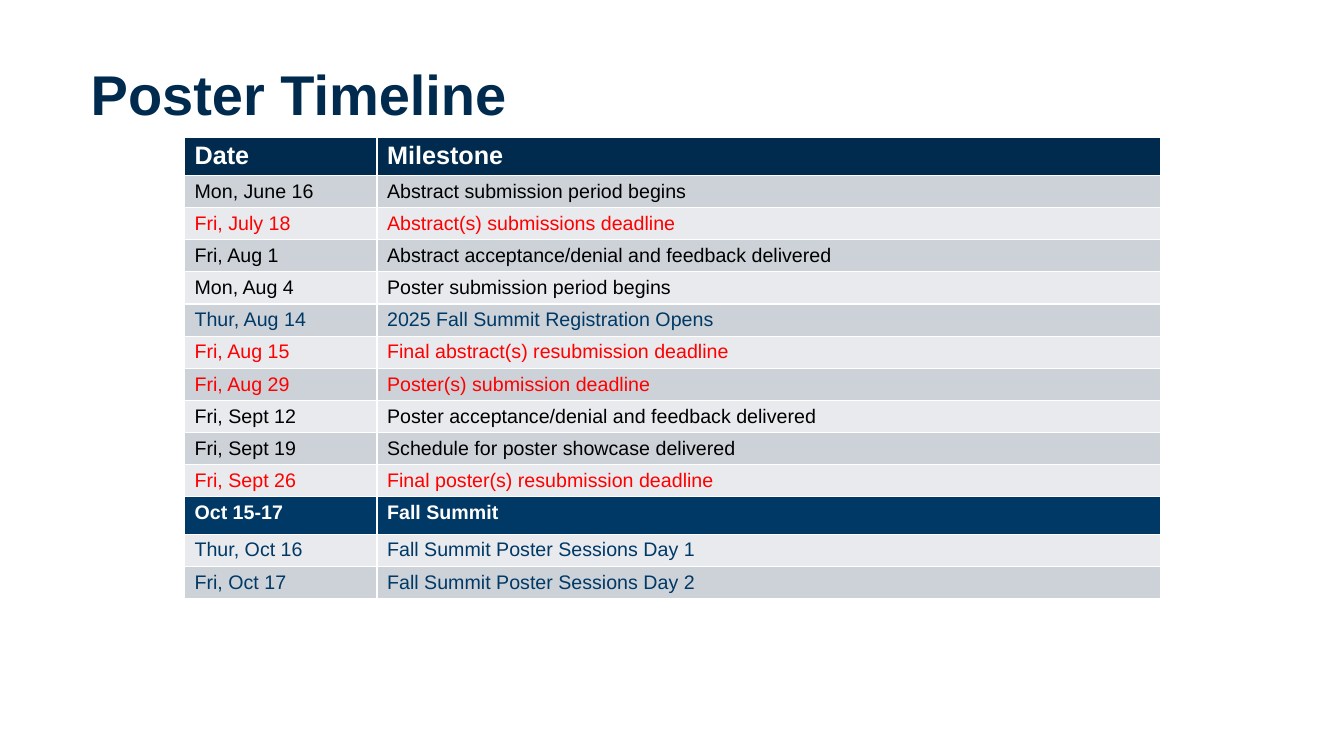
from pptx import Presentation
from pptx.dml.color import RGBColor
from pptx.enum import text
from pptx.util import Inches, Pt

FONT = "Arial"
NAVY, BLUE, RED, BLACK, WHITE = "002B4E", "003866", "FF0000", "000000", "FFFFFF"
BANDS = ("E8EAED", "CCD2D8")  # even rows, odd rows

TITLE = "Poster Timeline"
HEADER = ("Date", "Milestone")
EVENT = "Fall Summit"
MILESTONES = [
    ("Mon, June 16", "Abstract submission period begins", BLACK),
    ("Fri, July 18", "Abstract(s) submissions deadline", RED),
    ("Fri, Aug 1", "Abstract acceptance/denial and feedback delivered", BLACK),
    ("Mon, Aug 4", "Poster submission period begins", BLACK),
    ("Thur, Aug 14", "2025 Fall Summit Registration Opens", BLUE),
    ("Fri, Aug 15", "Final abstract(s) resubmission deadline", RED),
    ("Fri, Aug 29", "Poster(s) submission deadline", RED),
    ("Fri, Sept 12", "Poster acceptance/denial and feedback delivered", BLACK),
    ("Fri, Sept 19", "Schedule for poster showcase delivered", BLACK),
    ("Fri, Sept 26", "Final poster(s) resubmission deadline", RED),
    ("Oct 15-17", EVENT, WHITE),
    ("Thur, Oct 16", "Fall Summit Poster Sessions Day 1", BLUE),
    ("Fri, Oct 17", "Fall Summit Poster Sessions Day 2", BLUE),
]
COLUMN_WIDTHS = (1.91, 7.77)
TALL_ROW, ROW = 0.37, 0.28


def rgb(color):
    return RGBColor.from_string(color)


def format_runs(paragraph, size, color, bold):
    for run in paragraph.runs:
        run.font.name = FONT
        run.font.size = Pt(size)
        run.font.bold = bold
        run.font.color.rgb = rgb(color)


def add_title(slide):
    title = slide.shapes.title
    title.left, title.top = Inches(0.8), Inches(0.59)
    title.width, title.height = Inches(11.73), Inches(0.76)
    frame = title.text_frame
    frame.text = TITLE
    frame.vertical_anchor = text.MSO_ANCHOR.MIDDLE
    paragraph = frame.paragraphs[0]
    paragraph.alignment = text.PP_ALIGN.LEFT
    paragraph.line_spacing = 0.9
    format_runs(paragraph, 40, NAVY, True)


def fill_row(table, index, values, height, size, color, bold, fill):
    table.rows[index].height = Inches(height)
    for cell, value in zip(table.rows[index].cells, values):
        cell.text = value
        cell.fill.solid()
        cell.fill.fore_color.rgb = rgb(fill)
        format_runs(cell.text_frame.paragraphs[0], size, color, bold)


def add_timeline(slide):
    row_count = len(MILESTONES) + 1
    height = 2 * TALL_ROW + (row_count - 2) * ROW
    table = slide.shapes.add_table(
        row_count, len(HEADER), Inches(1.83), Inches(1.36),
        Inches(sum(COLUMN_WIDTHS)), Inches(height)).table
    for column, width in zip(table.columns, COLUMN_WIDTHS):
        column.width = Inches(width)

    fill_row(table, 0, HEADER, TALL_ROW, 18, WHITE, True, NAVY)
    for index, (date, milestone, color) in enumerate(MILESTONES, start=1):
        is_event = milestone == EVENT
        fill_row(table, index, (date, milestone), TALL_ROW if is_event else ROW,
                 14, color, is_event, BLUE if is_event else BANDS[index % 2])


def main():
    presentation = Presentation()
    presentation.slide_width = Inches(13.33)
    presentation.slide_height = Inches(7.5)
    slide = presentation.slides.add_slide(
        presentation.slide_layouts.get_by_name("Title Only"))
    add_title(slide)
    add_timeline(slide)
    presentation.save("out.pptx")


if __name__ == "__main__":
    main()
